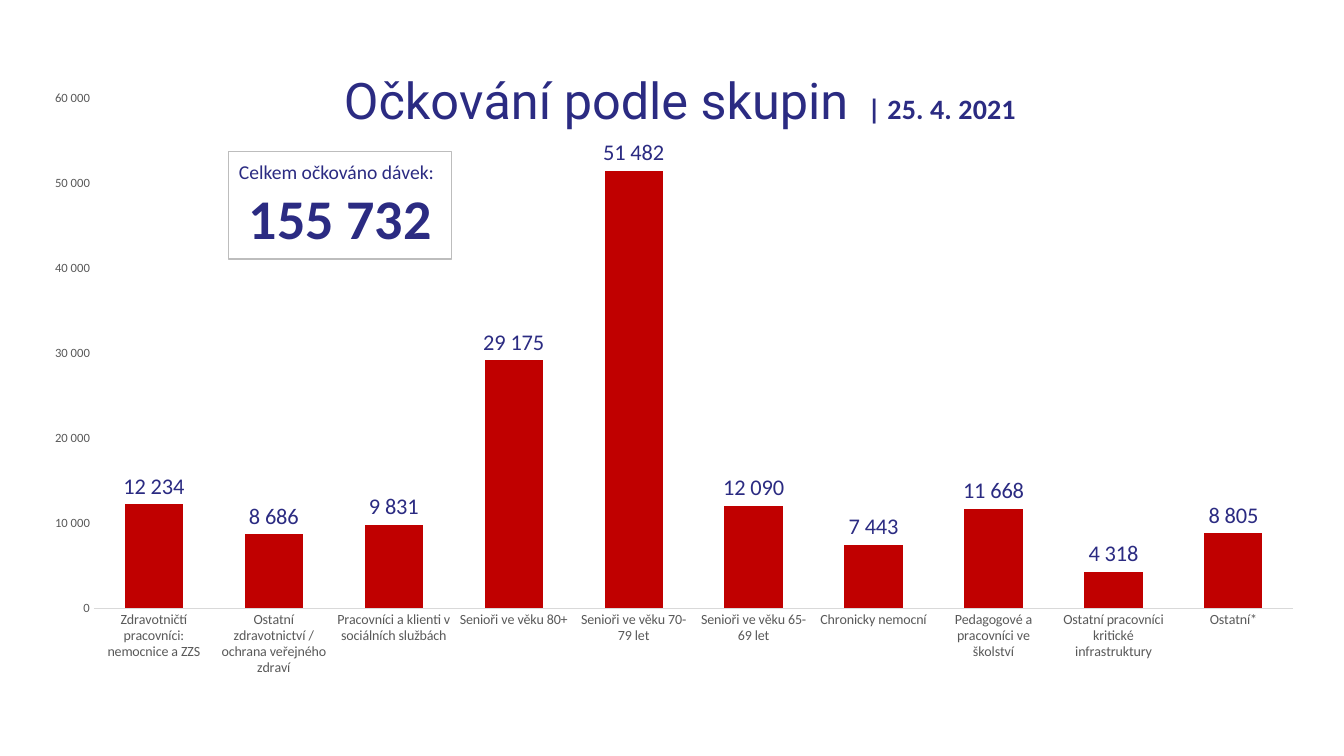
from lxml.etree import SubElement
from pptx import Presentation
from pptx.chart.data import CategoryChartData
from pptx.dml.color import RGBColor
from pptx.enum.chart import XL_CHART_TYPE as ChartType, XL_LABEL_POSITION as LabelPosition
from pptx.enum.chart import XL_TICK_MARK as TickMark
from pptx.enum.shapes import MSO_SHAPE as Shape
from pptx.enum.text import MSO_ANCHOR as Anchor, PP_ALIGN as Align
from pptx.oxml import parse_xml
from pptx.oxml.ns import nsdecls, qn
from pptx.util import Inches, Pt

COLORS = {"navy": "2B2B82", "red": "C00000", "gray": "595959", "axis": "D9D9D9",
          "border": "BDBDBD", "white": "FFFFFF", "black": "000000"}
NUMBER_FORMAT = r"[$-10405]#\ ##0;\(#\ ##0\)"
DOSES = {
    "Zdravotničtí pracovníci: nemocnice a ZZS": 12234,
    "Ostatní zdravotnictví / ochrana veřejného zdraví": 8686,
    "Pracovníci a klienti v sociálních službách": 9831,
    "Senioři ve věku 80+": 29175,
    "Senioři ve věku 70-79 let": 51482,
    "Senioři ve věku 65-69 let": 12090,
    "Chronicky nemocní": 7443,
    "Pedagogové a pracovníci ve školství": 11668,
    "Ostatní pracovníci kritické infrastruktury": 4318,
    "Ostatní*": 8805,
}


def color(name):
    return RGBColor.from_string(COLORS[name])


def style_font(font, size, ink="navy", name="Calibri", bold=False):
    font.size, font.name, font.bold = Pt(size), name, bold
    font.color.rgb = color(ink)


def write(paragraph, text, align=None, **style):
    run = paragraph.add_run()
    run.text = text
    if align is not None:
        paragraph.alignment = align
    style_font(run.font, **style)


def manual_layout(**settings):
    layout = parse_xml(f"<c:layout {nsdecls('c')}/>")
    manual = SubElement(layout, qn("c:manualLayout"))
    for tag, value in settings.items():
        SubElement(manual, qn(f"c:{tag}")).set("val", str(value))
    return layout


def no_fill():
    return parse_xml(f"<c:spPr {nsdecls('c', 'a')}><a:noFill/><a:ln><a:noFill/></a:ln></c:spPr>")


class SlideBuilder:
    """Builds the elements of one slide in a shared style."""

    def __init__(self, slide):
        self.slide = slide

    def total_box(self, caption, total, left, top, width, height):
        box = self.slide.shapes.add_shape(
            Shape.RECTANGLE, Inches(left), Inches(top), Inches(width), Inches(height))
        box.shadow.inherit = False
        box.fill.solid()
        box.fill.fore_color.rgb = color("white")
        box.line.color.rgb = color("border")
        box.line.width = Pt(0.75)
        frame = box.text_frame
        frame.word_wrap = True
        frame.vertical_anchor = Anchor.MIDDLE
        write(frame.paragraphs[0], caption, align=Align.LEFT, size=14)
        write(frame.add_paragraph(), total, align=Align.CENTER, size=40, bold=True)

    def column_chart(self, values, left, top, width, height):
        data = CategoryChartData(number_format=NUMBER_FORMAT)
        data.categories = list(values)
        data.add_series("Series 1", list(values.values()))
        chart = self.slide.shapes.add_chart(
            ChartType.COLUMN_CLUSTERED, Inches(left), Inches(top),
            Inches(width), Inches(height), data).chart
        chart.has_legend = False
        style_font(chart.font, 10, "black")
        self.style_columns(chart.plots[0])
        self.style_axes(chart)
        chart_space = chart._chartSpace
        chart_space.find(qn("c:chart")).addnext(no_fill())
        plot_area = chart_space.find(f".//{qn('c:plotArea')}")
        for layout in plot_area.findall(qn("c:layout")):
            plot_area.remove(layout)
        plot_area.insert(0, manual_layout(
            layoutTarget="inner", xMode="edge", yMode="edge",
            x=0.046, y=0.096, w=0.942, h=0.736))
        plot_area.append(no_fill())
        return chart

    def style_columns(self, plot):
        plot.vary_by_categories = False
        plot.gap_width, plot.overlap = 106, -27
        fill = plot.series[0].format.fill
        fill.solid()
        fill.fore_color.rgb = color("red")
        labels = plot.series[0].data_labels
        labels.show_value = True
        labels.position = LabelPosition.OUTSIDE_END
        labels.number_format = NUMBER_FORMAT
        labels.number_format_is_linked = False
        style_font(labels.font, 16)

    def style_axes(self, chart):
        for axis, size in ((chart.category_axis, 10), (chart.value_axis, 9)):
            axis.major_tick_mark = axis.minor_tick_mark = TickMark.NONE
            axis.has_major_gridlines = False
            style_font(axis.tick_labels.font, size, "gray")
        chart.category_axis.format.line.color.rgb = color("axis")
        chart.category_axis.format.line.width = Pt(0.75)
        axis = chart.value_axis
        axis.format.line.fill.background()
        axis.minimum_scale, axis.maximum_scale, axis.major_unit = 0, 60000, 10000
        axis.tick_labels.number_format = NUMBER_FORMAT
        axis.tick_labels.number_format_is_linked = False

    def chart_title(self, chart, heading, date, x, y):
        title = chart.chart_title
        paragraph = title.text_frame.paragraphs[0]
        write(paragraph, heading + " ", size=36, name="Roboto")
        write(paragraph, " " + date, size=20, bold=True)
        title.include_in_layout = True
        element = title._element
        for layout in element.findall(qn("c:layout")):
            element.remove(layout)
        element.find(qn("c:tx")).addnext(manual_layout(xMode="edge", yMode="edge", x=x, y=y))


def main():
    presentation = Presentation()
    presentation.slide_width, presentation.slide_height = Inches(13.33), Inches(7.5)
    builder = SlideBuilder(presentation.slides.add_slide(presentation.slide_layouts[6]))
    builder.total_box("Celkem očkováno dávek:", "155 732", 2.27, 1.5, 2.21, 1.07)
    chart = builder.column_chart(DOSES, 0.35, 0.32, 12.63, 6.87)
    builder.chart_title(chart, "Očkování podle skupin", "| 25. 4. 2021", 0.24, 0.05)
    presentation.save("out.pptx")


if __name__ == "__main__":
    main()
